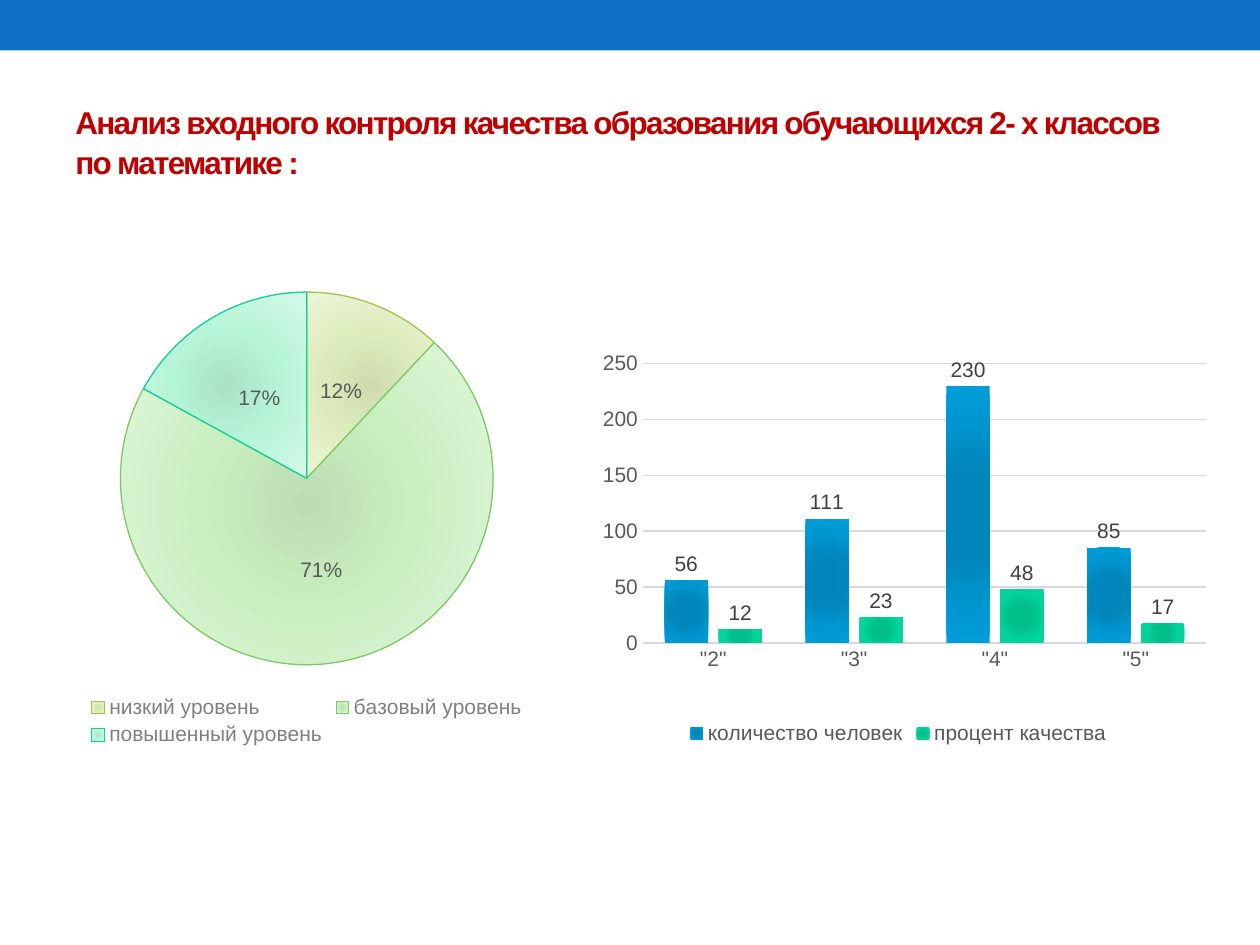
from lxml import etree
from pptx import Presentation
from pptx.chart.data import CategoryChartData
from pptx.dml.color import RGBColor
from pptx.enum.chart import XL_CHART_TYPE, XL_LABEL_POSITION, XL_LEGEND_POSITION, XL_TICK_MARK
from pptx.enum.shapes import MSO_SHAPE
from pptx.enum.text import MSO_ANCHOR
from pptx.oxml.ns import qn
from pptx.util import Inches, Pt

COLUMNS = XL_CHART_TYPE.COLUMN_CLUSTERED
PIE = XL_CHART_TYPE.PIE
OUTSIDE = XL_LABEL_POSITION.OUTSIDE_END
CENTER = XL_LABEL_POSITION.CENTER
BOTTOM = XL_LEGEND_POSITION.BOTTOM
NO_TICK = XL_TICK_MARK.NONE
RECTANGLE = MSO_SHAPE.RECTANGLE
MIDDLE = MSO_ANCHOR.MIDDLE

FONT = "Arial"
BLUE, RED, BLACK = "0F6FC6", "C00000", "000000"
AXIS_TEXT, LABEL_TEXT, LEGEND_TEXT, GRID = "595959", "404040", "808080", "D9D9D9"

LEVELS = [
    ("низкий уровень", 12, "A5C249", ("CDDBAF", "DDECBC", "ECF5DA")),
    ("базовый уровень", 71, "7CCA62", ("BBDEB3", "C9EFC0", "E1F7DC")),
    ("повышенный уровень", 17, "10CF9B", ("A9E2C8", "B6F4D8", "D7F9E9")),
]
MARKS = ['"2"', '"3"', '"4"', '"5"']
RESULTS = [
    ("количество человек", (56, 111, 230, 85), ("0086BA", "0086BA", "0096CF", "009DD9")),
    ("процент качества", (12, 23, 48, 17), ("00BF8B", "00BF8B", "00D59B", "10CF9B")),
]


def color(value):
    """Turn a hex string into a colour."""
    return RGBColor.from_string(value)


class SlideBuilder:
    """Hold the deck style and the current slide."""

    def __init__(self, width, height):
        """Start a deck with one blank slide."""
        self.deck = Presentation()
        self.deck.slide_width, self.deck.slide_height = Inches(width), Inches(height)
        self.slide = self.deck.slides.add_slide(self.deck.slide_layouts[6])

    def place(self, left, top, width, height):
        """Convert percentages of the slide into lengths."""
        across, down = self.deck.slide_width, self.deck.slide_height
        return [round(share * size / 100) for share, size in
                zip((left, top, width, height), (across, down, across, down))]

    def style(self, font, size, tone):
        """Set typeface, size and colour."""
        font.name, font.size = FONT, Pt(size)
        font.color.rgb = color(tone)

    def line(self, line, tone, width):
        """Set the colour and width of a line."""
        line.color.rgb = color(tone)
        line.width = Pt(width)

    def band(self, area, tone):
        """Draw a plain filled strip."""
        shape = self.slide.shapes.add_shape(RECTANGLE, *self.place(*area))
        shape.shadow.inherit = False
        shape.fill.solid()
        shape.fill.fore_color.rgb = color(tone)
        shape.line.fill.background()

    def title(self, area, text):
        """Write the bold, tightly spaced heading."""
        frame = self.slide.shapes.add_textbox(*self.place(*area)).text_frame
        frame.word_wrap = True
        frame.vertical_anchor = MIDDLE
        para = frame.paragraphs[0]
        para.line_spacing = 1.05
        span = para.add_run()
        span.text = text
        span.font.bold = True
        self.style(span.font, 18, RED)
        span.font._element.set("spc", "-100")

    def radial(self, element, shares, tones):
        """Fill a series or slice with a circular gradient."""
        fill = etree.Element(qn("a:gradFill"), rotWithShape="1")
        stops = etree.SubElement(fill, qn("a:gsLst"))
        for share, tone in zip(shares, tones):
            stop = etree.SubElement(stops, qn("a:gs"), pos=str(share * 1000))
            etree.SubElement(stop, qn("a:srgbClr"), val=tone)
        circle = etree.SubElement(fill, qn("a:path"), path="circle")
        etree.SubElement(circle, qn("a:fillToRect"), {side: "100000" for side in "ltrb"})
        element.get_or_add_spPr().insert(0, fill)

    def chart(self, kind, area, categories, series, legend_tone):
        """Add a chart with a legend below it."""
        data = CategoryChartData()
        data.categories = categories
        for name, values in series:
            data.add_series(name, values)
        chart = self.slide.shapes.add_chart(kind, *self.place(*area), data).chart
        chart.has_title = False
        self.style(chart.font, 10, BLACK)
        chart.has_legend = True
        chart.legend.position = BOTTOM
        chart.legend.include_in_layout = False
        self.style(chart.legend.font, 12, legend_tone)
        return chart

    def labels(self, plot, position, tone):
        """Switch on data labels."""
        plot.has_data_labels = True
        labels = plot.data_labels
        labels.show_value = True
        labels.position = position
        self.style(labels.font, 12, tone)
        return labels

    def pie(self, area, slices):
        """Add a pie with percentages on its slices."""
        values = [value for _, value, _, _ in slices]
        chart = self.chart(PIE, area, [row[0] for row in slices],
                           [("Уровень", values)], LEGEND_TEXT)
        plot = chart.plots[0]
        plot.vary_by_categories = True
        labels = self.labels(plot, CENTER, AXIS_TEXT)
        labels.show_value, labels.show_percentage = False, True
        labels.number_format, labels.number_format_is_linked = "0%", False
        series = plot.series[0]
        for index, (_, _, edge, tones) in enumerate(slices):
            self.line(series.points[index].format.line, edge, 0.75)
            self.radial(series._element.get_or_add_dPt_for_point(index), (0, 45, 100), tones)

    def columns(self, area, categories, rows, inner):
        """Add clustered columns with values above them."""
        chart = self.chart(COLUMNS, area, categories, [row[:2] for row in rows], AXIS_TEXT)
        plot = chart.plots[0]
        plot.vary_by_categories = False
        plot.gap_width, plot.overlap = 100, -24
        self.labels(plot, OUTSIDE, LABEL_TEXT)
        for series, (_, _, tones) in zip(plot.series, rows):
            series.format.line.fill.background()
            self.radial(series._element, (0, 34, 70, 100), tones)
        for axis in (chart.category_axis, chart.value_axis):
            axis.major_tick_mark = axis.minor_tick_mark = NO_TICK
            self.style(axis.tick_labels.font, 12, AXIS_TEXT)
        self.line(chart.category_axis.format.line, GRID, 1)
        chart.value_axis.format.line.fill.background()
        self.line(chart.value_axis.major_gridlines.format.line, GRID, 0.75)
        self.inner_layout(chart, inner)

    def inner_layout(self, chart, inner):
        """Fix the plot area by shares of the chart."""
        plot_area = chart._chartSpace.chart.plotArea
        layout = plot_area.find(qn("c:layout"))
        if layout is None:
            layout = etree.Element(qn("c:layout"))
            plot_area.insert(0, layout)
        manual = etree.SubElement(layout, qn("c:manualLayout"))
        settings = [("layoutTarget", "inner"), ("xMode", "edge"), ("yMode", "edge")]
        for name, value in settings + list(zip("xywh", inner)):
            etree.SubElement(manual, qn(f"c:{name}"), val=str(value))


def main():
    """Build and save the slide."""
    builder = SlideBuilder(10, 7.5)
    builder.band((0, 0, 100, 5.33), BLUE)
    builder.title((5, 7.73, 90, 14.4),
                  "Анализ входного контроля качества образования "
                  "обучающихся 2- х классов по математике :")
    builder.columns((45.3, 35.87, 52, 43.47), MARKS, RESULTS, (0.11, 0.06, 0.86, 0.68))
    builder.pie((3.5, 29.07, 41.7, 50.4), LEVELS)
    builder.deck.save("out.pptx")


if __name__ == "__main__":
    main()
